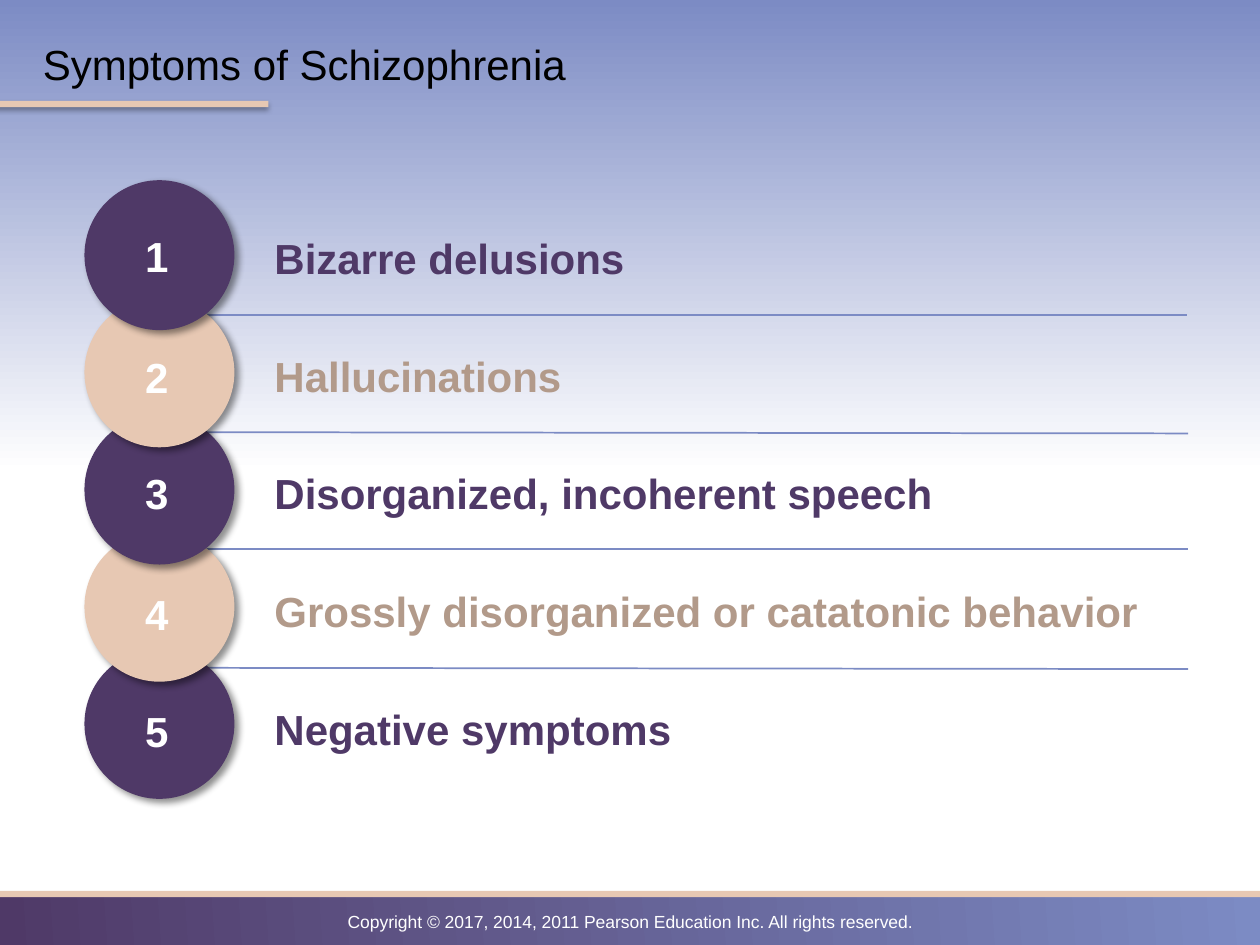
from dataclasses import dataclass

from lxml.etree import SubElement
from pptx import Presentation
from pptx.dml.color import RGBColor
from pptx.enum.shapes import MSO_CONNECTOR, MSO_SHAPE
from pptx.enum.text import MSO_ANCHOR, PP_ALIGN
from pptx.oxml.ns import qn
from pptx.util import Inches, Pt

PURPLE, PEACH, TAUPE, BLUE = "4F3967", "E7C8B3", "B29A8A", "7C8BC4"
WHITE, BLACK = "FFFFFF", "000000"
PITCH = 0.93
DIAMETER = 1.19


@dataclass
class Symptom:
    text: str
    text_top: float
    number_top: float
    circle_color: str
    text_color: str


@dataclass
class Divider:
    left: float
    start_top: float
    right: float
    end_top: float


@dataclass
class Shadow:
    opacity: int
    blur: float
    distance: float
    angle: int


SYMPTOMS = [
    Symptom("Bizarre delusions", 1.84, 1.78, PURPLE, PURPLE),
    Symptom("Hallucinations", 2.78, 2.74, PEACH, TAUPE),
    Symptom("Disorganized, incoherent speech", 3.71, 3.66, PURPLE, PURPLE),
    Symptom("Grossly disorganized or catatonic behavior", 4.64, 4.62, PEACH, TAUPE),
    Symptom("Negative symptoms", 5.58, 5.55, PURPLE, PURPLE),
]
DIVIDERS = [
    Divider(1.55, 2.5, 9.42, 2.5),
    Divider(1.41, 3.43, 9.43, 3.44),
    Divider(1.41, 4.36, 9.43, 4.36),
    Divider(1.37, 5.3, 9.43, 5.31),
]
BAR_SHADOW = Shadow(35, 3.1, 1.8, 90)
CIRCLE_SHADOW = Shadow(43, 4, 3, 45)


def rgb(color: str) -> RGBColor:
    return RGBColor.from_string(color)


def set_gradient(fill, stops: list, angle: float) -> None:
    fill.gradient()
    fill.gradient_angle = angle
    for stop, (position, color) in zip(fill.gradient_stops, stops):
        stop.position = position
        stop.color.rgb = rgb(color)


def add_shadow(effects, shadow: Shadow) -> None:
    outer = SubElement(
        effects, qn("a:outerShdw"),
        blurRad=str(Pt(shadow.blur)), dist=str(Pt(shadow.distance)),
        dir=str(shadow.angle * 60000), algn="ctr", rotWithShape="0")
    color = SubElement(outer, qn("a:srgbClr"), val=BLACK)
    SubElement(color, qn("a:alpha"), val=str(shadow.opacity * 1000))


def draw_shape(slide, kind, left: float, top: float, width: float, height: float,
               color: str, shadow: Shadow | None = None):
    shape = slide.shapes.add_shape(
        kind, Inches(left), Inches(top), Inches(width), Inches(height))
    shape.fill.solid()
    shape.fill.fore_color.rgb = rgb(color)
    shape.line.fill.background()
    shape.shadow.inherit = False
    if shadow:
        add_shadow(shape.element.spPr.find(qn("a:effectLst")), shadow)
    return shape


def format_span(span, size: float, color: str, bold: bool = False) -> None:
    span.font.size = Pt(size)
    span.font.name = "Arial"
    span.font.bold = bold
    span.font.color.rgb = rgb(color)


def draw_text(slide, text: str, left: float, top: float, width: float, height: float,
              size: float, color: str, bold: bool = False, align=PP_ALIGN.LEFT):
    box = slide.shapes.add_textbox(
        Inches(left), Inches(top), Inches(width), Inches(height))
    box.text_frame.word_wrap = True
    box.text_frame.text = text
    para = box.text_frame.paragraphs[0]
    para.alignment = align
    format_span(para.runs[0], size, color, bold)
    return para


def draw_divider(slide, divider: Divider) -> None:
    line = slide.shapes.add_connector(
        MSO_CONNECTOR.STRAIGHT, Inches(divider.left), Inches(divider.start_top),
        Inches(divider.right), Inches(divider.end_top))
    line.line.color.rgb = rgb(BLUE)
    line.line.width = Pt(1)
    SubElement(line.element.spPr, qn("a:effectLst"))


def draw_label(slide, number: int, symptom: Symptom) -> None:
    para = draw_text(slide, symptom.text, 2.08, symptom.text_top, 7.5, 0.47,
                     24, symptom.text_color, bold=True)
    para.line_spacing = 0.9
    para = draw_text(slide, str(number), 0.77, symptom.number_top, 0.95, 0.51,
                     24, WHITE, bold=True, align=PP_ALIGN.CENTER)
    properties = para.runs[0].font.fill
    properties.solid()
    properties.fore_color.rgb = rgb(WHITE)
    run_properties = para.runs[0]._r.get_or_add_rPr()
    effects = SubElement(run_properties, qn("a:effectLst"))
    add_shadow(effects, CIRCLE_SHADOW)
    run_properties.find(qn("a:solidFill")).addnext(effects)


def draw_frame(slide) -> None:
    set_gradient(slide.background.fill, [(0.5, WHITE), (1, BLUE)], 90)
    footer = draw_shape(slide, MSO_SHAPE.RECTANGLE, 0, 7.08, 10, 0.45, PURPLE)
    set_gradient(footer.fill, [(0, PURPLE), (1, BLUE)], 4)
    draw_shape(slide, MSO_SHAPE.RECTANGLE, 0, 7.07, 10.05, 0.05, PEACH)
    draw_text(slide,
              "Copyright © 2017, 2014, 2011 Pearson Education Inc. All rights reserved.",
              0, 7.18, 10, 0.27, 10, WHITE, align=PP_ALIGN.CENTER)
    draw_shape(slide, MSO_SHAPE.RECTANGLE, -0.19, 0.8, 2.32, 0.05, PEACH, BAR_SHADOW)


def draw_title(slide, text: str) -> None:
    title = slide.shapes.title
    title.left, title.top = Inches(0.24), Inches(0.21)
    title.width, title.height = Inches(8.5), Inches(0.59)
    title.text_frame.text = text
    title.text_frame.vertical_anchor = MSO_ANCHOR.MIDDLE
    para = title.text_frame.paragraphs[0]
    para.alignment = PP_ALIGN.LEFT
    format_span(para.runs[0], 24, BLACK)


def main() -> None:
    deck = Presentation()
    deck.slide_width, deck.slide_height = Inches(10), Inches(7.5)
    page = deck.slides.add_slide(deck.slide_layouts[5])
    draw_frame(page)
    for divider in DIVIDERS:
        draw_divider(page, divider)
    for index, symptom in reversed(list(enumerate(SYMPTOMS))):
        draw_shape(page, MSO_SHAPE.OVAL, 0.67, 1.43 + index * PITCH,
                   DIAMETER, DIAMETER, symptom.circle_color, CIRCLE_SHADOW)
    for number, symptom in enumerate(SYMPTOMS, start=1):
        draw_label(page, number, symptom)
    draw_title(page, "Symptoms of Schizophrenia")
    deck.save("out.pptx")


if __name__ == "__main__":
    main()
